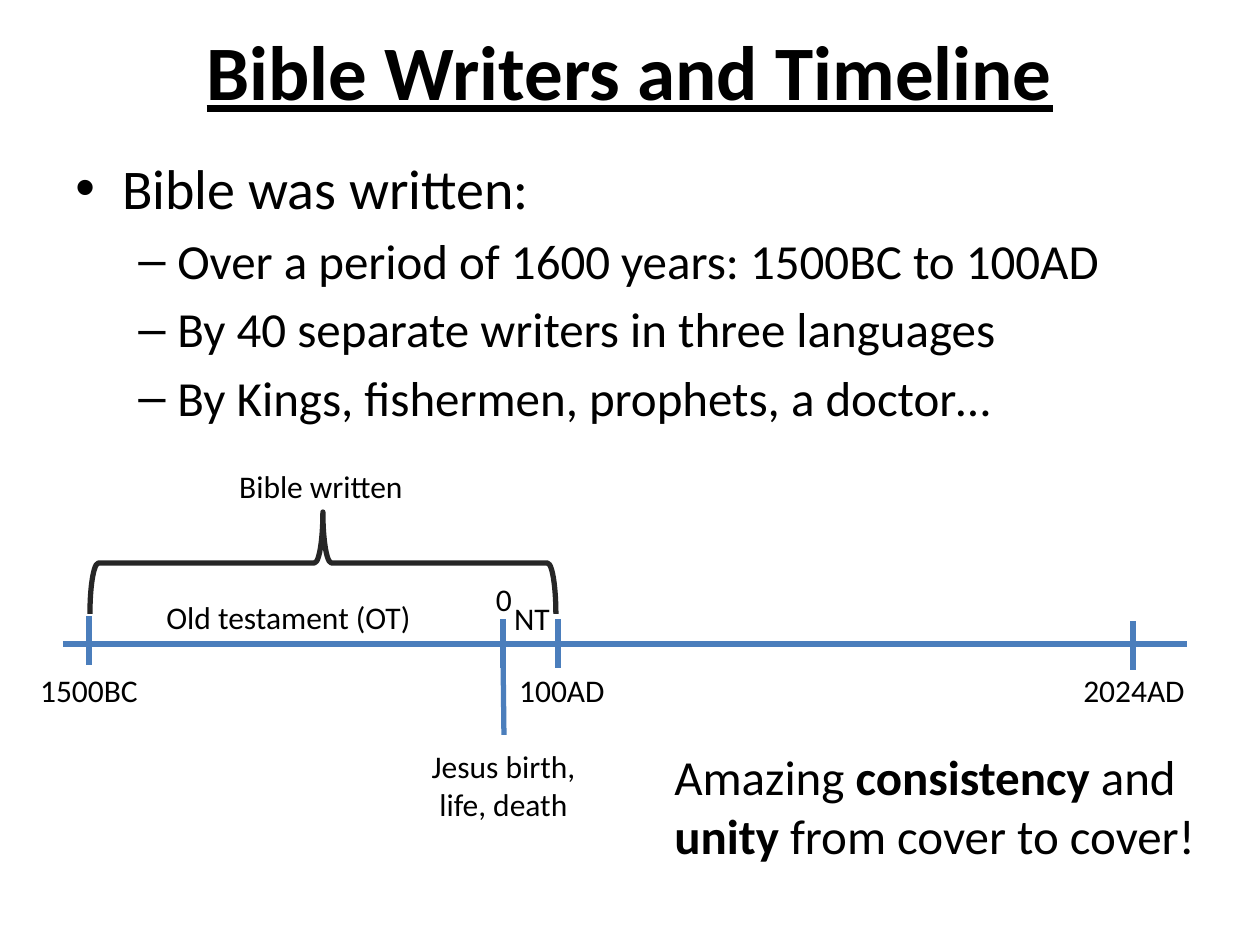
import pptx
import pptx.dml.color
import pptx.enum.shapes
import pptx.enum.text
import pptx.oxml.ns
import pptx.util
from lxml import etree

EMU_PER_PX = 914400 // 126
CENTER = pptx.enum.text.PP_ALIGN.CENTER
LEFT = pptx.enum.text.PP_ALIGN.LEFT


def px(length):
    return pptx.util.Emu(length * EMU_PER_PX)


def color(value):
    return pptx.dml.color.RGBColor.from_string(value)


class TimelineSlide:
    font = "Calibri"
    ink = "000000"
    axis = "4B7EBC"
    brace_ink = "262626"
    weight = 3

    def __init__(self, deck):
        self.slide = deck.slides.add_slide(deck.slide_layouts[5])
        self.shapes = self.slide.shapes

    def run(self, paragraph, wording, size, bold=False, underline=False):
        run = paragraph.add_run()
        run.text = wording
        run.font.name = self.font
        run.font.size = pptx.util.Pt(size)
        run.font.bold = bold
        run.font.underline = underline
        run.font.color.rgb = color(self.ink)

    def title(self, wording, left, top, width, height):
        heading = self.shapes.title
        heading.left, heading.top = px(left), px(top)
        heading.width, heading.height = px(width), px(height)
        heading.text_frame.vertical_anchor = pptx.enum.text.MSO_ANCHOR.MIDDLE
        paragraph = heading.text_frame.paragraphs[0]
        paragraph.alignment = CENTER
        self.run(paragraph, wording, 44, bold=True, underline=True)

    def frame(self, left, top, width, height):
        frame = self.shapes.add_textbox(px(left), px(top), px(width), px(height)).text_frame
        frame.word_wrap = True
        return frame

    def text(self, runs, left, top, width, height, size=18, align=CENTER):
        paragraph = self.frame(left, top, width, height).paragraphs[0]
        paragraph.alignment = align
        for wording, bold in runs:
            self.run(paragraph, wording, size, bold)

    def bullets(self, items, left, top, width, height):
        frame = self.frame(left, top, width, height)
        styles = [("•", 32, 47, 47), ("–", 28, 102, 39)]
        for index, (level, wording) in enumerate(items):
            mark, size, margin, hanging = styles[level]
            paragraph = frame.add_paragraph() if index else frame.paragraphs[0]
            paragraph.level = level
            self.run(paragraph, wording, size)
            properties = paragraph._p.get_or_add_pPr()
            properties.set("marL", str(px(margin)))
            properties.set("indent", str(-px(hanging)))
            spacing = etree.SubElement(properties, pptx.oxml.ns.qn("a:spcBef"))
            etree.SubElement(spacing, pptx.oxml.ns.qn("a:spcPct"), val="20000")
            etree.SubElement(properties, pptx.oxml.ns.qn("a:buFont"), typeface="Arial")
            etree.SubElement(properties, pptx.oxml.ns.qn("a:buChar"), char=mark)

    def line(self, x1, y1, x2, y2):
        line = self.shapes.add_connector(
            pptx.enum.shapes.MSO_CONNECTOR.STRAIGHT, px(x1), px(y1), px(x2), px(y2))
        line.line.color.rgb = color(self.axis)
        line.line.width = pptx.util.Pt(self.weight)
        etree.SubElement(line._element.spPr, pptx.oxml.ns.qn("a:effectLst"))

    def brace(self, left, top, width, height):
        brace = self.shapes.add_shape(
            pptx.enum.shapes.MSO_SHAPE.RIGHT_BRACE,
            px(left), px(top), px(width), px(height))
        brace.rotation = 270
        brace.shadow.inherit = False
        brace.fill.background()
        brace.line.color.rgb = color(self.brace_ink)
        brace.line.width = pptx.util.Pt(self.weight)


def main():
    deck = pptx.Presentation()
    deck.slide_width = pptx.util.Inches(10)
    deck.slide_height = pptx.util.Inches(7.5)
    timeline = TimelineSlide(deck)

    timeline.title("Bible Writers and Timeline", 63, 10, 1134, 120)
    timeline.bullets([
        (0, "Bible was written:"),
        (1, "Over a period of 1600 years: 1500BC to 100AD"),
        (1, "By 40 separate writers in three languages"),
        (1, "By Kings, fishermen, prophets, a doctor…"),
    ], 63, 147, 1134, 294)

    timeline.line(63, 644, 1187, 644)
    for tick_x, tick_top in [(89, 616), (558, 619), (1133, 621), (503, 619)]:
        timeline.line(tick_x, tick_top + 49, tick_x, tick_top)
    timeline.line(504, 735, 503, 649)
    timeline.brace(272, 330, 102, 466)

    for wording, left, top, width, height in [
        ("1500BC", 21, 665, 136, 50),
        ("0", 436, 574, 136, 50),
        ("100AD", 494, 665, 136, 50),
        ("2024AD", 1066, 665, 136, 50),
        ("Jesus birth, life, death", 409, 741, 189, 89),
        ("Bible written", 203, 461, 236, 50),
        ("Old testament (OT)", 136, 592, 305, 50),
        ("NT", 490, 593, 84, 50),
    ]:
        timeline.text([(wording, False)], left, top, width, height)

    timeline.text([
        ("Amazing ", False),
        ("consistency", True),
        (" and ", False),
        ("unity", True),
        (" from cover to cover!", False),
    ], 662, 740, 557, 131, size=28, align=LEFT)

    deck.save("out.pptx")


if __name__ == "__main__":
    main()
